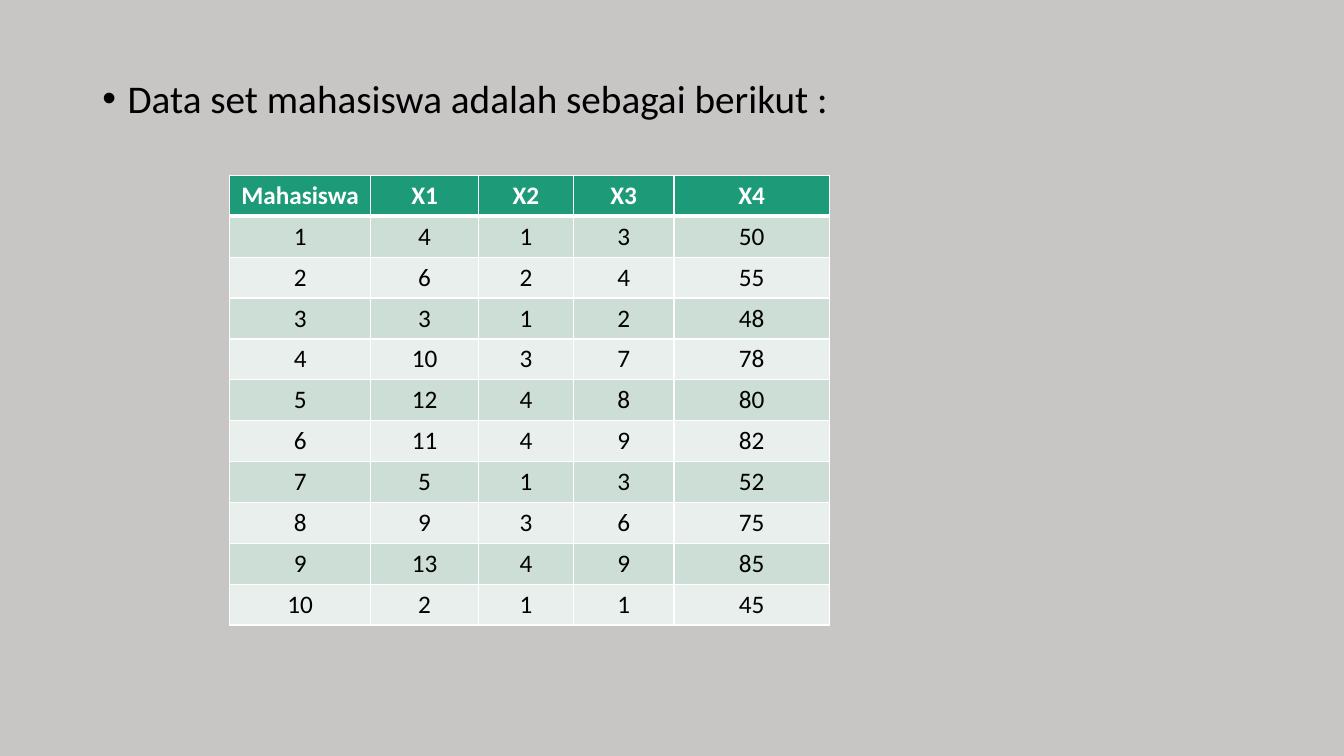
"""Builds a slide with a student data set: one bullet line and a table."""
from lxml.etree import SubElement
from pptx import Presentation
from pptx.dml.color import RGBColor
from pptx.enum.text import MSO_AUTO_SIZE as AutoSize, MSO_ANCHOR as Anchor, PP_ALIGN as Align
from pptx.oxml.ns import qn
from pptx.util import Pt

HEADER = ("Mahasiswa", "X1", "X2", "X3", "X4")
STUDENTS = (
    (4, 1, 3, 50),
    (6, 2, 4, 55),
    (3, 1, 2, 48),
    (10, 3, 7, 78),
    (12, 4, 8, 80),
    (11, 4, 9, 82),
    (5, 1, 3, 52),
    (9, 3, 6, 75),
    (13, 4, 9, 85),
    (2, 1, 1, 45),
)


def color(value):
    return RGBColor.from_string(value)


def write(frame, text, size=18, ink="000000", bold=False, align=Align.CENTER,
          spacing=1.0, bullet=None, indent=18):
    paragraph = frame.paragraphs[0]
    paragraph.text = text
    paragraph.alignment = align
    paragraph.line_spacing = spacing
    paragraph.space_before = Pt(0)
    if bullet:
        properties = paragraph._p.get_or_add_pPr()
        properties.set("marL", str(Pt(indent)))
        properties.set("indent", str(-Pt(indent)))
        SubElement(properties, qn("a:buFont")).set("typeface", "Arial")
        SubElement(properties, qn("a:buChar")).set("char", bullet)
    font = paragraph.runs[0].font
    font.name = "Calibri"
    font.size = Pt(size)
    font.bold = bold
    font.color.rgb = color(ink)


class DataSlide:
    green, dark_band, light_band, white = "1D9A78", "CDDED6", "E8EFEC", "FFFFFF"

    def __init__(self, deck, background):
        self.slide = deck.slides.add_slide(deck.slide_layouts[1])
        title = self.slide.shapes.title
        title.element.getparent().remove(title.element)
        fill = self.slide.background.fill
        fill.solid()
        fill.fore_color.rgb = color(background)

    def body(self, text, left, top, width, height):
        body = self.slide.placeholders[1]
        body.left, body.top, body.width, body.height = map(Pt, (left, top, width, height))
        frame = body.text_frame
        frame.word_wrap = True
        frame.auto_size = AutoSize.NONE
        frame.vertical_anchor = Anchor.TOP
        write(frame, text, size=28, align=Align.JUSTIFY, spacing=0.9, bullet="•")

    def border(self, cell, side, width):
        line = SubElement(cell._tc.get_or_add_tcPr(), qn(f"a:ln{side}"), w=str(Pt(width)))
        fill = SubElement(line, qn("a:solidFill"))
        SubElement(fill, qn("a:srgbClr"), val=self.white)

    def cell(self, cell, value, row):
        for side in "LRTB":
            under_header = (row, side) in ((0, "B"), (1, "T"))
            self.border(cell, side, 3 if under_header else 1)
        band = self.dark_band if row % 2 else self.light_band
        cell.fill.solid()
        cell.fill.fore_color.rgb = color(band if row else self.green)
        write(cell.text_frame, str(value), bold=row == 0,
              ink="000000" if row else self.white)

    def table(self, rows, left, top, widths, row_height):
        frame = self.slide.shapes.add_table(
            len(rows), len(widths), Pt(left), Pt(top),
            Pt(sum(widths)), Pt(row_height * len(rows)))
        table = frame.table
        for column, width in zip(table.columns, widths):
            column.width = Pt(width)
        for number, values in enumerate(rows):
            table.rows[number].height = Pt(row_height)
            for position, value in enumerate(values):
                self.cell(table.cell(number, position), value, number)


def main():
    deck = Presentation()
    deck.slide_width, deck.slide_height = Pt(960), Pt(540)
    students = [(number, *scores) for number, scores in enumerate(STUDENTS, 1)]
    page = DataSlide(deck, background="C8C5C5")
    page.body("Data set mahasiswa adalah sebagai berikut :", 66, 53.3, 828, 433.4)
    page.table([HEADER, *students], 164, 125.3, (100.8, 77, 67.7, 72, 110.9), 29.2)
    deck.save("out.pptx")


if __name__ == "__main__":
    main()
